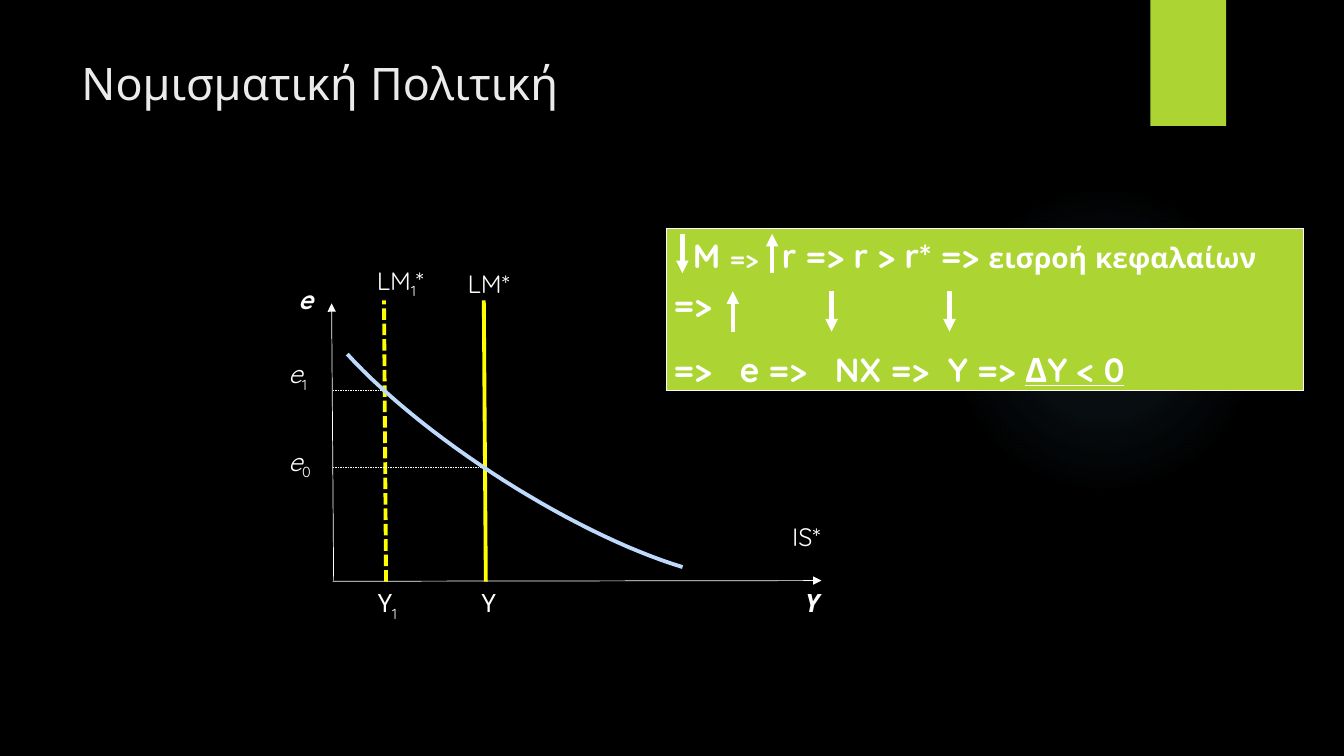
from math import cos, radians, sin
from lxml.etree import SubElement
from pptx import Presentation
from pptx.dml.color import RGBColor
from pptx.enum.dml import MSO_LINE
from pptx.enum.shapes import MSO_CONNECTOR, MSO_SHAPE
from pptx.oxml import parse_xml
from pptx.oxml.ns import nsdecls, qn
from pptx.util import Inches, Pt

C = {k: RGBColor.from_string(v) for k, v in {
    "black": "000000", "white": "FFFFFF", "title": "EBEBEB", "green": "ACD433",
    "yellow": "FFFF00", "curve": "BDD9FB"}.items()}
FONT = "Quicksand"

prs = Presentation()
prs.slide_width, prs.slide_height = Inches(13.33), Inches(7.5)
COL, ROW = prs.slide_width / 40, prs.slide_height / 22.5
s = prs.slides.add_slide(prs.slide_layouts[6])
s.background.fill.solid()
s.background.fill.fore_color.rgb = C["black"]


def add_line(shapes, x1, y1, x2, y2, color, width, dash=None, arrow=False):
    ln = shapes.add_connector(MSO_CONNECTOR.STRAIGHT, int(x1 * COL), int(y1 * ROW),
                              int(x2 * COL), int(y2 * ROW))
    ln.line.color.rgb = C[color]
    ln.line.width = Pt(width)
    if dash:
        ln.line.dash_style = dash
    if arrow:
        SubElement(ln.line._get_or_add_ln(), qn("a:tailEnd"), type="triangle")
    SubElement(ln._element.spPr, qn("a:effectLst"))


def add_text(shapes, x, y, w, h, parts, size, color="white", bold=None, italic=None):
    sp = shapes.add_textbox(int(x * COL), int(y * ROW), int(w * COL), int(h * ROW))
    tf = sp.text_frame
    tf.word_wrap = True
    p = tf.paragraphs[0]
    p.font.name, p.font.size, p.font.bold = FONT, Pt(size), bold
    p.font.color.rgb = C[color]
    for i, part in enumerate(parts):
        r = p.add_run()
        r.text = part
        if i == 0:
            r.font.italic = italic
        if i == 1:
            r.font._element.set("baseline", "-25000")


glow = s.shapes.add_shape(MSO_SHAPE.OVAL, int(28.23 * COL), int(5.49 * ROW),
                          int(9.24 * COL), int(9.24 * ROW))
glow.shadow.inherit = False
glow.line.fill.background()
stops = "".join(f'<a:gs pos="{pos}000"><a:srgbClr val="7AC4F0"><a:alpha val="{alpha}000"/>'
                "</a:srgbClr></a:gs>" for pos, alpha in [(0, 7), (36, 6), (69, 0)])
glow._element.spPr.find(qn("a:prstGeom")).addnext(parse_xml(
    f'<a:gradFill {nsdecls("a")}><a:gsLst>{stops}</a:gsLst><a:path path="circle">'
    '<a:fillToRect l="50000" t="50000" r="50000" b="50000"/></a:path></a:gradFill>'))

tab = s.shapes.add_shape(MSO_SHAPE.RECTANGLE, int(34.24 * COL), 0,
                         int(2.25 * COL), int(3.75 * ROW))
tab.shadow.inherit = False
tab.fill.solid()
tab.fill.fore_color.rgb = C["green"]
tab.line.fill.background()

add_text(s.shapes, 2.13, 1.5, 30.87, 4.59, ["Νομισματική Πολιτική"], 32, "title")

axes = s.shapes.add_group_shape().shapes
add_line(axes, 9.9, 17.3, 24.45, 17.28, "white", 0.5, arrow=True)
add_line(axes, 9.93, 17.28, 9.87, 9.03, "white", 0.5, arrow=True)
for x, y, label, strong in [(23.67, 17.34, "Υ", True), (8.58, 8.31, "e", True),
                            (23.28, 15.36, "IS*", None)]:
    add_text(axes, x, y, 1.83, 1.44, [label], 18, bold=strong, italic=strong)

for x, dash in [(14.4, None), (11.43, MSO_LINE.SQUARE_DOT)]:
    add_line(s.shapes, x + 0.06, 17.31, x, 8.94, "yellow", 2.75, dash)
for x, y in [(14.43, 13.89), (11.43, 11.62)]:
    add_line(s.shapes, 9.9, y, x, y, "white", 0.25, MSO_LINE.DASH)

for x, y, w, parts, italic in [
        (13.62, 7.83, 2.22, ["LM*"], None),
        (10.92, 7.74, 2.88, ["LM", "1", "*"], None),
        (8.28, 13.14, 1.83, ["e", "0"], True),
        (8.28, 10.53, 1.83, ["e", "1"], True),
        (14.04, 17.34, 1.83, ["Υ"], None),
        (10.95, 17.34, 1.83, ["Υ", "1"], None)]:
    add_text(s.shapes, x, y, w, 1.44, parts, 18, italic=italic)

tilt, steps = radians(212.7), 30
points = []
for i in range(steps + 1):
    a = radians(224.2 + 89.6 * i / steps)
    u, v = 8.39 * cos(a), 2.33 * sin(a)
    points.append((int((16.13 + u * cos(tilt) - v * sin(tilt)) * COL),
                   int((12.26 + u * sin(tilt) + v * cos(tilt)) * ROW)))
fb = s.shapes.build_freeform(*points[0])
fb.add_line_segments(points[1:], close=False)
curve = fb.convert_to_shape()
curve.shadow.inherit = False
curve.fill.background()
curve.line.color.rgb = C["curve"]
curve.line.width = Pt(2.75)

frame = s.shapes.add_table(1, 1, int(19.84 * COL), int(6.81 * ROW),
                           int(18.96 * COL), int(4.82 * ROW))
cell = frame.table.cell(0, 0)
cell.fill.solid()
cell.fill.fore_color.rgb = C["green"]
cell.margin_left = cell.margin_right = Inches(0.07)
cell.margin_top = cell.margin_bottom = 0
tcPr = cell._tc.get_or_add_tcPr()
for i, side in enumerate(["lnL", "lnR", "lnT", "lnB"]):
    tcPr.insert(i, parse_xml(
        f'<a:{side} {nsdecls("a")} w="{Pt(1)}"><a:solidFill>'
        f'<a:srgbClr val="{C["white"]}"/></a:solidFill></a:{side}>'))

tf = cell.text_frame
effects = [
    (0.19, 0, [("M ", 24, 0), ("=>", 18, 0), (" ", 18, 11.5), ("r => r > r* => ", 24, 0),
               ("εισροή κεφαλαίων", 20, 0), (" =>", 24, 0)]),
    (0, 12, [("=>", 24, 0), (" ", 24, 13), ("e =>", 24, 0), (" ", 24, 13),
             ("NX =>", 24, 0), (" ", 24, 6.5), ("Y => ", 24, 0), ("ΔY < 0", 24, 0)])]
for i, (indent, before, runs) in enumerate(effects):
    p = tf.add_paragraph() if i else tf.paragraphs[0]
    pPr = p._p.get_or_add_pPr()
    pPr.set("marL", "0")
    pPr.set("indent", str(Inches(indent)))
    p.line_spacing = 1.15
    if before:
        p.space_before = Pt(before)
    p.font.name, p.font.bold = FONT, True
    p.font.color.rgb = C["white"]
    for text, size, spacing in runs:
        r = p.add_run()
        r.text = text
        r.font.size = Pt(size)
        if spacing:
            r.font._element.set("spc", str(int(spacing * 100)))
r.font.underline = True

for x, y1, y2 in [(20.31, 6.96, 8.13), (22.98, 8.13, 6.96), (21.81, 9.87, 8.67),
                  (24.75, 8.67, 9.87), (28.26, 8.67, 9.87)]:
    add_line(s.shapes, x, y1, x, y2, "white", 3, arrow=True)

prs.save("out.pptx")
